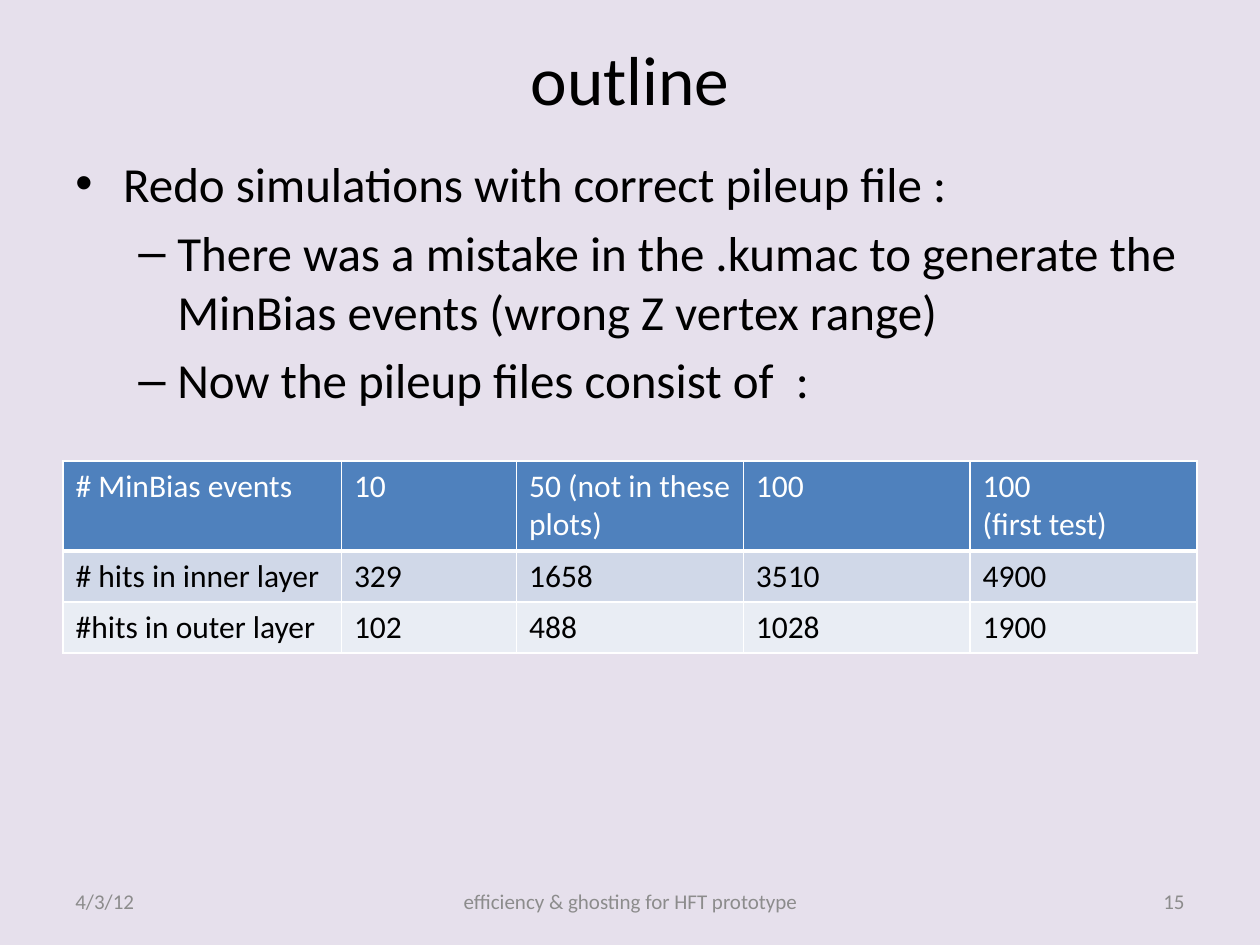
import pptx
import pptx.dml.color
import pptx.enum.text
import pptx.oxml.ns
import pptx.util
import lxml.etree

WIDTH, HEIGHT = 10, 7.5
MARGIN = 0.05  # share of the slide width
ALIGN = pptx.enum.text.PP_ALIGN
ANCHOR = pptx.enum.text.MSO_ANCHOR


def color(value):
    return pptx.dml.color.RGBColor.from_string(value)


def add_xml(parent, tag, **attributes):
    return lxml.etree.SubElement(parent, pptx.oxml.ns.qn(tag), attributes)


def write(para, text, size=18, ink="000000", align=ALIGN.LEFT, font="Calibri"):
    para.alignment = align
    span = para.add_run()
    span.text = text
    span.font.name = font
    span.font.size = pptx.util.Pt(size)
    span.font.color.rgb = color(ink)


class Page:
    """One slide and its style; places are shares of the slide's size."""

    header_fill, band_fills = "4F81BD", ("D0D8E8", "E9EDF4")
    white = "FFFFFF"

    def __init__(self, deck, background):
        self.slide = deck.slides.add_slide(deck.slide_layouts[6])
        fill = self.slide.background.fill
        fill.solid()
        fill.fore_color.rgb = color(background)

    def place(self, left, top, width, height):
        return [pptx.util.Inches(share * full) for share, full in
                zip((left, top, width, height), (WIDTH, HEIGHT) * 2)]

    def text(self, area, words, anchor=ANCHOR.MIDDLE, **style):
        frame = self.slide.shapes.add_textbox(*self.place(*area)).text_frame
        frame.word_wrap = True
        frame.vertical_anchor = anchor
        write(frame.paragraphs[0], words, **style)

    def bullets(self, area, items, size):
        frame = self.slide.shapes.add_textbox(*self.place(*area)).text_frame
        frame.word_wrap = True
        levels = (("•", 0.38, -0.38), ("–", 0.81, -0.31))
        for index, (level, words) in enumerate(items):
            para = frame.add_paragraph() if index else frame.paragraphs[0]
            para.level = level
            para.space_before = pptx.util.Pt(size * 0.2)
            write(para, words, size=size)
            mark, left, indent = levels[level]
            props = para._p.get_or_add_pPr()
            props.set("marL", str(pptx.util.Inches(left)))
            props.set("indent", str(pptx.util.Inches(indent)))
            add_xml(props, "a:buFont", typeface="Arial")
            add_xml(props, "a:buChar", char=mark)

    def cell(self, cell, words, fill, ink, bottom):
        for index, line in enumerate(words.split("\n")):
            frame = cell.text_frame
            para = frame.add_paragraph() if index else frame.paragraphs[0]
            write(para, line, ink=ink)
        # Borders come before the fill in the cell properties
        props = cell._tc.get_or_add_tcPr()
        for side, width in (("L", 1), ("R", 1), ("T", 1), ("B", bottom)):
            line = add_xml(props, "a:ln" + side, w=str(pptx.util.Pt(width)))
            add_xml(add_xml(line, "a:solidFill"), "a:srgbClr", val=self.white)
        cell.fill.solid()
        cell.fill.fore_color.rgb = color(fill)

    def table(self, area, rows, widths, heights):
        table = self.slide.shapes.add_table(
            len(rows), len(widths), *self.place(*area)).table
        for column, width in zip(table.columns, widths):
            column.width = pptx.util.Inches(width * WIDTH)
        for r, (row, height) in enumerate(zip(rows, heights)):
            table.rows[r].height = pptx.util.Inches(height * HEIGHT)
            fill = self.band_fills[(r - 1) % 2] if r else self.header_fill
            ink, bottom = ("000000", 1) if r else (self.white, 3)
            for c, words in enumerate(row):
                self.cell(table.cell(r, c), words, fill, ink, bottom)


def main():
    deck = pptx.Presentation()
    deck.slide_width = pptx.util.Inches(WIDTH)
    deck.slide_height = pptx.util.Inches(HEIGHT)
    page = Page(deck, "E6E0EC")
    content = 1 - 2 * MARGIN

    # Title and bullets
    page.text((MARGIN, 0.04, content, 0.084), "outline",
              size=39.6, align=ALIGN.CENTER)
    page.bullets((MARGIN, 0.156, content, 0.323), [
        (0, "Redo simulations with correct pileup file :"),
        (1, "There was a mistake in the .kumac to generate the "
            "MinBias events (wrong Z vertex range)"),
        (1, "Now the pileup files consist of  :"),
    ], size=28)

    # Hits per pileup file
    page.table((MARGIN, 0.488, content, 0.203), [
        ["# MinBias events", "10", "50 (not in these plots)", "100",
         "100\n(first test)"],
        ["# hits in inner layer", "329", "1658", "3510", "4900"],
        ["#hits in outer layer", "102", "488", "1028", "1900"],
    ], widths=[0.221, 0.139, 0.18, 0.18, 0.18], heights=[0.095, 0.054, 0.054])

    # Footer
    side = 0.233
    for left, width, words, align in (
            (MARGIN, side, "4/3/12", ALIGN.LEFT),
            (0.342, 0.317, "efficiency & ghosting for HFT prototype", ALIGN.CENTER),
            (1 - MARGIN - side, side, "15", ALIGN.RIGHT)):
        page.text((left, 0.927, width, 0.053), words,
                  size=12, ink="8C8C8C", align=align)

    deck.save("out.pptx")


if __name__ == "__main__":
    main()
